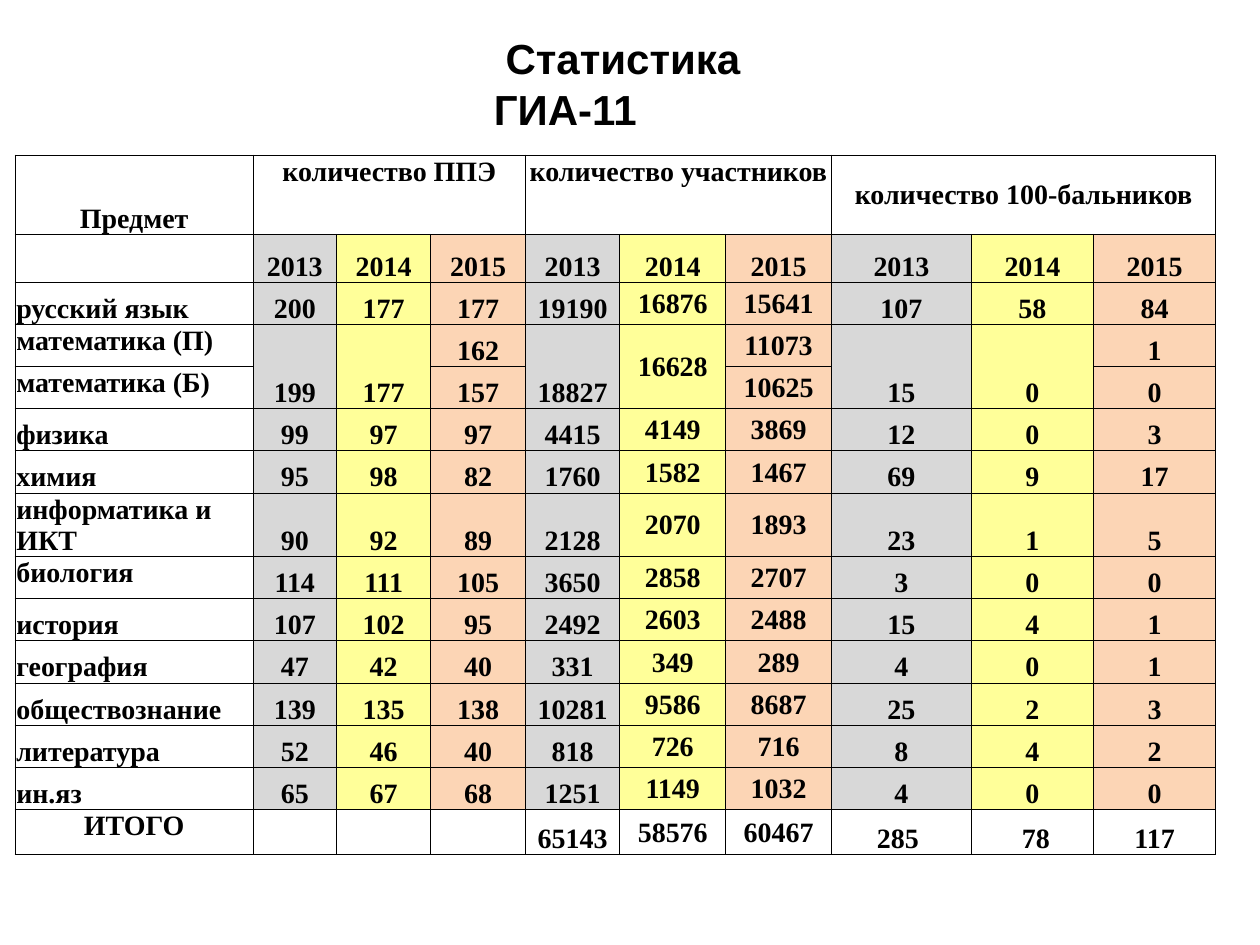
from dataclasses import dataclass
from typing import Optional

from lxml import etree
from pptx import Presentation
from pptx.dml.color import RGBColor
from pptx.enum import text as t
from pptx.oxml import ns
from pptx.util import Inches, Pt

BLACK = RGBColor(0x00, 0x00, 0x00)
GREY = RGBColor(0xD8, 0xD8, 0xD8)
YELLOW = RGBColor(0xFF, 0xFF, 0x99)
PEACH = RGBColor(0xFC, 0xD5, 0xB5)
YEAR_COLOURS = (GREY, YELLOW, PEACH)

TOP = t.MSO_ANCHOR.TOP
MIDDLE = t.MSO_ANCHOR.MIDDLE
BOTTOM = t.MSO_ANCHOR.BOTTOM
LEFT = t.PP_ALIGN.LEFT
CENTER = t.PP_ALIGN.CENTER

COLUMN_WIDTHS = (1.89, 0.66, 0.75, 0.75, 0.75, 0.84, 0.84, 1.11, 0.97, 0.97)
SUBJECT_HEIGHT = 4.02 / 12
MIDDLE_COLUMNS = (5, 6)


@dataclass
class Row:
    label: str
    values: tuple[str, ...]
    height: float = SUBJECT_HEIGHT
    label_anchor: t.MSO_ANCHOR = BOTTOM
    label_align: t.PP_ALIGN = LEFT
    middle_columns: tuple[int, ...] = MIDDLE_COLUMNS
    filled: bool = True


@dataclass
class Group:
    heading: str
    anchor: t.MSO_ANCHOR


GROUPS = (
    Group("количество ППЭ", TOP),
    Group("количество участников", TOP),
    Group("количество 100-бальников", MIDDLE),
)


def subject(label: str, values: str, anchor: t.MSO_ANCHOR = BOTTOM) -> Row:
    return Row(label, tuple("" if value == "-" else value for value in values.split()),
               label_anchor=anchor)


ROWS = (
    Row("Предмет", ("",) * 9, height=0.63, label_align=CENTER, filled=False),
    Row("", ("2013", "2014", "2015") * 3, height=0.38, middle_columns=()),
    subject("русский язык", "200 177 177 19190 16876 15641 107 58 84"),
    subject("математика (П)", "199 177 162 18827 16628 11073 15 0 1", TOP),
    subject("математика (Б)", "- - 157 - - 10625 - - 0", TOP),
    subject("физика", "99 97 97 4415 4149 3869 12 0 3"),
    subject("химия", "95 98 82 1760 1582 1467 69 9 17"),
    subject("информатика и ИКТ", "90 92 89 2128 2070 1893 23 1 5", TOP),
    subject("биология", "114 111 105 3650 2858 2707 3 0 0", TOP),
    subject("история", "107 102 95 2492 2603 2488 15 4 1"),
    subject("география", "47 42 40 331 349 289 4 0 1"),
    subject("обществознание", "139 135 138 10281 9586 8687 25 2 3"),
    subject("литература", "52 46 40 818 726 716 8 4 2"),
    subject("ин.яз", "65 67 68 1251 1149 1032 4 0 0"),
    Row("ИТОГО", ("", "", "", "65143", "58576", "60467", "285 ", " 78", "117"),
        height=0.36, label_anchor=TOP, label_align=CENTER, filled=False),
)
MATHS_ROW = 3


def write_text(frame, content: str, *, size: float = 16, font: str = "Times New Roman",
               align: t.PP_ALIGN = CENTER) -> None:
    paragraph = frame.paragraphs[0]
    paragraph.alignment = align
    if not content:
        return
    run = paragraph.add_run()
    run.text = content
    run.font.size = Pt(size)
    run.font.name = font
    run.font.bold = True
    run.font.color.rgb = BLACK


def add_borders(cell) -> None:
    properties = cell._tc.get_or_add_tcPr()
    for edge in ("a:lnL", "a:lnR", "a:lnT", "a:lnB"):
        line = etree.SubElement(properties, ns.qn(edge), w=str(Pt(0.5)))
        fill = etree.SubElement(line, ns.qn("a:solidFill"))
        etree.SubElement(fill, ns.qn("a:srgbClr"), val=str(BLACK))


def format_cell(cell, content: str, *, anchor: t.MSO_ANCHOR = BOTTOM,
                align: t.PP_ALIGN = CENTER, colour: Optional[RGBColor] = None) -> None:
    cell.margin_left = cell.margin_right = cell.margin_top = Inches(0.01)
    cell.margin_bottom = 0
    cell.vertical_anchor = anchor
    add_borders(cell)
    if colour is None:
        cell.fill.background()
    else:
        cell.fill.solid()
        cell.fill.fore_color.rgb = colour
    write_text(cell.text_frame, content, align=align)


def add_title(slide) -> None:
    title = slide.shapes.title
    title.left, title.top = Inches(3.82), Inches(0.21)
    title.width, title.height = Inches(2.95), Inches(0.9)
    frame = title.text_frame
    frame.word_wrap = True
    frame.auto_size = t.MSO_AUTO_SIZE.NONE
    frame.vertical_anchor = TOP
    write_text(frame, " Статистика ГИА-11", size=24, font="Arial", align=LEFT)


def add_statistics(slide) -> None:
    height = sum(row.height for row in ROWS)
    table = slide.shapes.add_table(
        len(ROWS), len(COLUMN_WIDTHS), Inches(0.12), Inches(1.23),
        Inches(sum(COLUMN_WIDTHS)), Inches(height)).table
    table.first_row = table.horz_banding = False
    for column, width in zip(table.columns, COLUMN_WIDTHS):
        column.width = Inches(width)

    for row_index, row in enumerate(ROWS):
        table.rows[row_index].height = Inches(row.height)
        format_cell(table.cell(row_index, 0), row.label,
                    anchor=row.label_anchor, align=row.label_align)
        for column_index, value in enumerate(row.values, start=1):
            group_index, year_index = divmod(column_index - 1, 3)
            anchor = MIDDLE if column_index in row.middle_columns else BOTTOM
            if row_index == 0:
                group = GROUPS[group_index]
                anchor = group.anchor
                value = group.heading if year_index == 0 else ""
            format_cell(table.cell(row_index, column_index), value, anchor=anchor,
                        colour=YEAR_COLOURS[year_index] if row.filled else None)

    for first in range(1, len(COLUMN_WIDTHS), 3):
        table.cell(0, first).merge(table.cell(0, first + 2))
        for column_index in (first, first + 1):
            table.cell(MATHS_ROW, column_index).merge(
                table.cell(MATHS_ROW + 1, column_index))


def main() -> None:
    presentation = Presentation()
    presentation.slide_width, presentation.slide_height = Inches(10), Inches(7.5)
    slide = presentation.slides.add_slide(presentation.slide_layouts[5])
    add_statistics(slide)
    add_title(slide)
    presentation.save("out.pptx")


if __name__ == "__main__":
    main()
